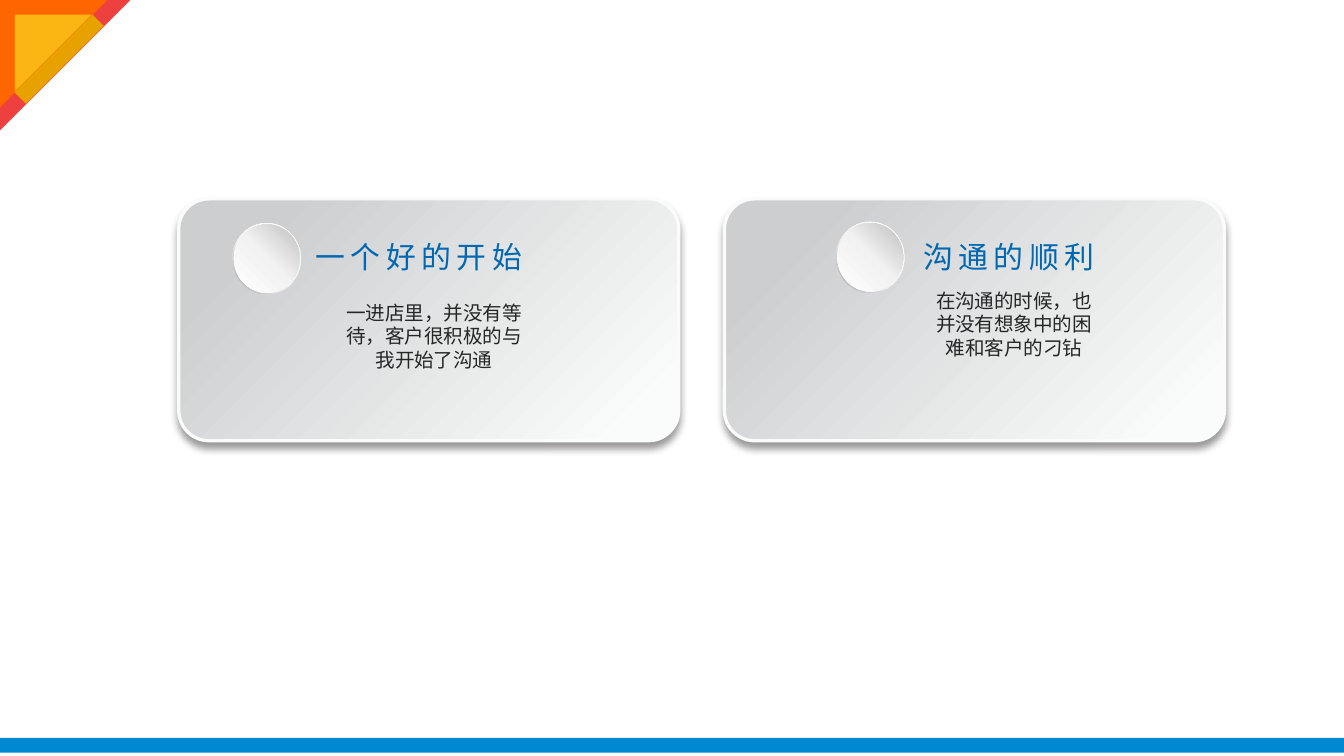
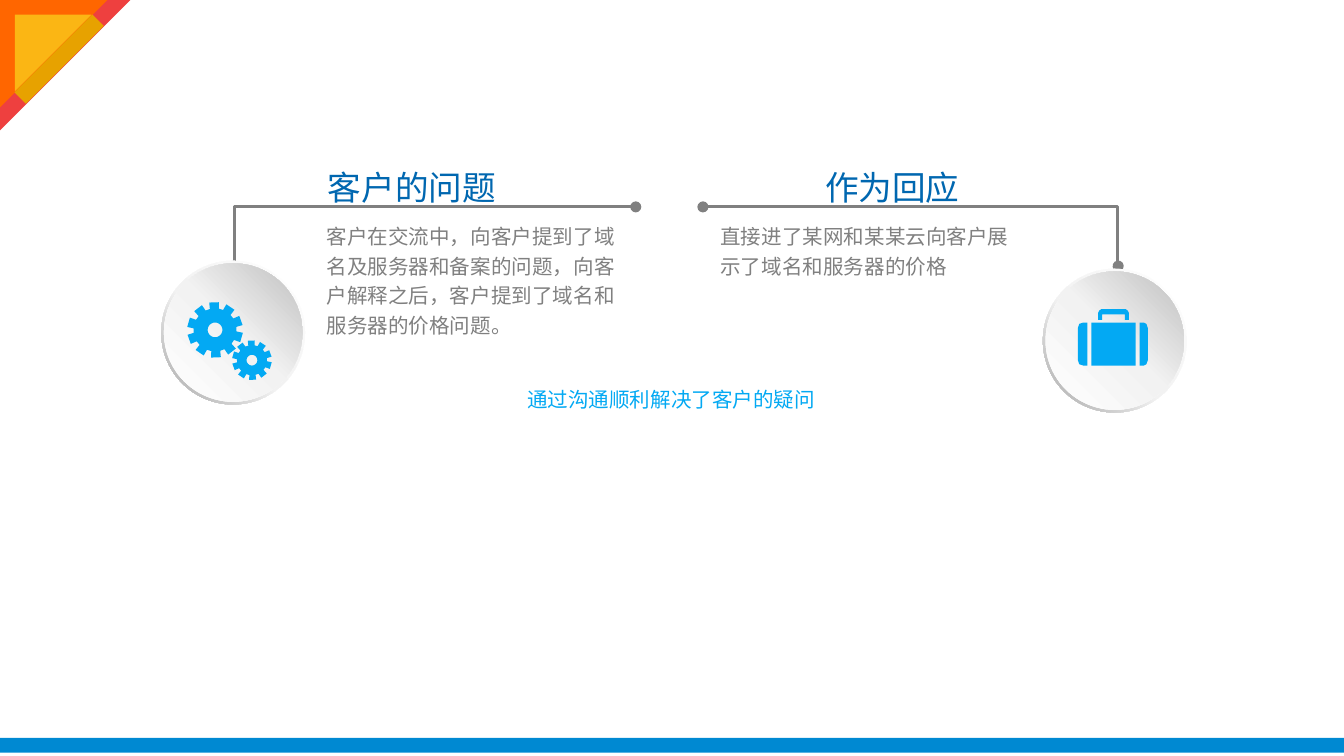
from math import cos, radians, sin

from lxml.etree import SubElement
from pptx import Presentation
from pptx.dml.color import RGBColor as Rgb
from pptx.enum.shapes import MSO_CONNECTOR as Link, MSO_SHAPE as Kind
from pptx.enum.text import MSO_AUTO_SIZE as Fit, PP_ALIGN as Align
from pptx.oxml.ns import qn
from pptx.util import Inches, Pt

COLORS = {
    "title": "0067B0", "ink": "262626", "gray": "808080", "sky": "03A9F3",
    "band": "0089D2", "red": "EE403F", "orange": "FF6600", "yellow": "FBB614",
    "gold": "E7A200", "card_edge": "FAFCFB", "shadow": "000000",
}
CARD_FILL = [(15, "CDCED0"), (92, "FAFCFB")]
RIM_FILL = [(0, "FFFFFF"), (55, "F2F2F2"), (100, "A6A6A6")]
FACE_FILL = [(0, "FFFFFF"), (51, "F2F2F2"), (100, "BFBFBF")]
FONT = "Arial"

prs = Presentation()
prs.slide_width = Inches(10)
prs.slide_height = prs.slide_width * 9 // 16
CELL = prs.slide_width // 100  # square grid: 100 columns, 56.25 rows


def paint(slide, kind, box, fill, angle=0):
    """Add a borderless shape; fill is a color name or a list of gradient stops."""
    shape = slide.shapes.add_shape(kind, *(round(n * CELL) for n in box))
    shape.shadow.inherit = False
    shape.line.fill.background()
    if isinstance(fill, str):
        shape.fill.solid()
        shape.fill.fore_color.rgb = Rgb.from_string(COLORS[fill])
        return shape
    shape.fill.gradient()
    shape.fill.gradient_angle = 360 - angle
    stops = shape._element.spPr.find(".//" + qn("a:gsLst"))
    stops.clear()
    for share, color in fill:
        stop = SubElement(stops, qn("a:gs"), pos=str(share * 1000))
        SubElement(stop, qn("a:srgbClr"), val=color)
    return shape


def write(slide, box, text, size, color, wrap=True, align=None,
          inset=(1, 0.5), spacing=None, tracking=0):
    frame = slide.shapes.add_textbox(*(round(n * CELL) for n in box)).text_frame
    frame.margin_left = frame.margin_right = round(inset[0] * CELL)
    frame.margin_top = frame.margin_bottom = round(inset[1] * CELL)
    frame.word_wrap = wrap
    frame.auto_size = Fit.NONE if wrap else Fit.SHAPE_TO_FIT_TEXT
    frame.text = text
    line = frame.paragraphs[0]
    line.alignment = align
    line.line_spacing = spacing
    font = line.runs[0].font
    font.name, font.size = FONT, Pt(size)
    font.color.rgb = Rgb.from_string(COLORS[color])
    if tracking:
        line.runs[0]._r.get_or_add_rPr().set("spc", str(tracking * 100))


start, answer = (prs.slides.add_slide(prs.slide_layouts[6]) for _ in range(2))

# Slide 1: two cards
for left in (13.3, 53.9):
    card = paint(start, Kind.ROUNDED_RECTANGLE, (left, 14.8, 37.2, 18), CARD_FILL, 45)
    card.adjustments[0] = 0.125
    card.line.color.rgb = Rgb.from_string(COLORS["card_edge"])
    card.line.width = Pt(1.75)
    effects = card._element.spPr.find(qn("a:effectLst"))
    cast = SubElement(effects, qn("a:outerShdw"), blurRad=str(Pt(4)),
                      dist=str(Pt(3)), dir="5400000", algn="t", rotWithShape="0")
    tone = SubElement(cast, qn("a:srgbClr"), val=COLORS["shadow"])
    SubElement(tone, qn("a:alpha"), val="40000")

for heading, heading_box, story, story_box in (
    ("一个好的开始", (22.5, 17.3, 18, 3.7),
     "一进店里，并没有等待，客户很积极的与我开始了沟通", (24.6, 21.9, 15.4, 6.3)),
    ("沟通的顺利", (67.7, 17.3, 15.3, 3.7),
     "在沟通的时候，也并没有想象中的困难和客户的刁钻", (68.1, 21, 14.7, 6.3)),
):
    write(start, heading_box, heading, 16, "title", wrap=False, tracking=3)
    write(start, story_box, story, 10.5, "ink", align=Align.CENTER)

# Slide 2: bent lines from each disc to its heading
for begin, end in (((17.4, 19.8), (47.3, 15.4)), ((83.2, 19.8), (52.3, 15.4))):
    lead = answer.shapes.add_connector(
        Link.ELBOW, *(round(n * CELL) for n in begin + end))
    lead.line.color.rgb = Rgb.from_string(COLORS["gray"])
    lead.line.width = Pt(1.5)
    stroke = lead.line._get_or_add_ln()
    for tip in ("a:headEnd", "a:tailEnd"):
        SubElement(stroke, qn(tip), type="oval")
    props = lead._element.spPr
    SubElement(props, qn("a:effectLst"))
    bends = props.find(qn("a:prstGeom")).get_or_add_avLst()
    SubElement(bends, qn("a:gd"), name="adj1", fmla="val 200")

# Discs on both slides: a rim and a face inside it
for slide, left, top, width, height, rim in (
    (start, 17.3, 16.6, 5.1, 5.3, 0.1), (start, 62.2, 16.5, 5.1, 5.3, 0.1),
    (answer, 12, 19.4, 10.7, 10.7, 0.2), (answer, 77.6, 20, 10.7, 10.7, 0.2),
):
    ring = paint(slide, Kind.DONUT, (left, top, width, height), RIM_FILL, 135)
    ring.adjustments[0] = 0.049
    paint(slide, Kind.OVAL,
          (left + rim, top + rim, width - 2 * rim, height - 2 * rim), FACE_FILL, 315)

# Icons: gears with ten teeth and a hub, and a suitcase
icons = []
for x, y, tip, root, hub in ((16, 24.55, 2.08, 1.6, 0.55), (18.75, 26.8, 1.48, 1.12, 0.4)):
    teeth = [(16 + 36 * tooth + turn, radius) for tooth in range(10)
             for turn, radius in ((-12, root), (-10, tip), (10, tip), (12, root))]
    hole = [(-turn, hub) for turn in range(0, 360, 15)]
    icons.append([[(x + r * cos(radians(a)), y + r * sin(radians(a))) for a, r in ring]
                  for ring in (teeth, hole)])
icons.append([
    [(81.7, 23.8), (81.7, 23.3), (81.8, 23.1), (81.95, 23), (83.75, 23), (83.9, 23.1),
     (84, 23.3), (84, 23.8), (83.7, 23.8), (83.7, 23.4), (82, 23.4), (82, 23.8)],
    [(81.2, 24), (84.5, 24), (84.5, 27.2), (81.2, 27.2)],
    [(80.9, 24), (80.6, 24), (80.3, 24.1), (80.2, 24.4), (80.2, 26.8), (80.3, 27.1),
     (80.6, 27.2), (80.9, 27.2)],
    [(84.8, 24), (85.1, 24), (85.3, 24.1), (85.4, 24.4), (85.4, 26.8), (85.3, 27.1),
     (85.1, 27.2), (84.8, 27.2)],
])
for outlines in icons:
    pen = None
    for outline in outlines:
        points = [(round(x * CELL), round(y * CELL)) for x, y in outline]
        if pen is None:
            pen = answer.shapes.build_freeform(*points[0])
        else:
            pen.move_to(*points[0])
        pen.add_line_segments(points[1:], close=True)
    icon = pen.convert_to_shape()
    icon.shadow.inherit = False
    icon.fill.solid()
    icon.fill.fore_color.rgb = Rgb.from_string(COLORS["sky"])
    icon.line.fill.background()

# Slide 2: headings, explanations and conclusion
for heading, heading_box, detail, detail_box in (
    ("客户的问题", (23.7, 12, 14.1, 3.8),
     "客户在交流中，向客户提到了域名及服务器和备案的问题，向客户解释之后，"
     "客户提到了域名和服务器的价格问题。", (23.6, 15.9, 23.6, 8.3)),
    ("作为回应", (60.7, 12, 11.6, 3.8),
     "直接进了某网和某某云向客户展示了域名和服务器的价格", (52.9, 15.9, 23.5, 9.5)),
):
    write(answer, heading_box, heading, 18, "title", wrap=False, inset=(0.7, 0.4))
    write(answer, detail_box, detail, 11, "gray", inset=(0.7, 0.4), spacing=1.2)
write(answer, (28.4, 28.1, 43.1, 2.6), "通过沟通顺利解决了客户的疑问", 11, "sky",
      align=Align.CENTER, inset=(0.6, 0.3), spacing=1.2)

# Shared footer band and corner ornament
for slide in (start, answer):
    for kind, box, color, turn in (
        (Kind.RECTANGLE, (0, 54.9, 100, 1.1), "band", 0),
        (Kind.RIGHT_TRIANGLE, (0, 0, 9.7, 9.7), "red", 90),
        (Kind.RIGHT_TRIANGLE, (0, 0, 8, 8), "orange", 90),
        (Kind.RIGHT_TRIANGLE, (1.1, 1.1, 5.7, 5.7), "yellow", 90),
        (Kind.RECTANGLE, (3.8, 0.3, 1.2, 8.2), "gold", 45),
    ):
        paint(slide, kind, box, color).rotation = turn

prs.save("out.pptx")
